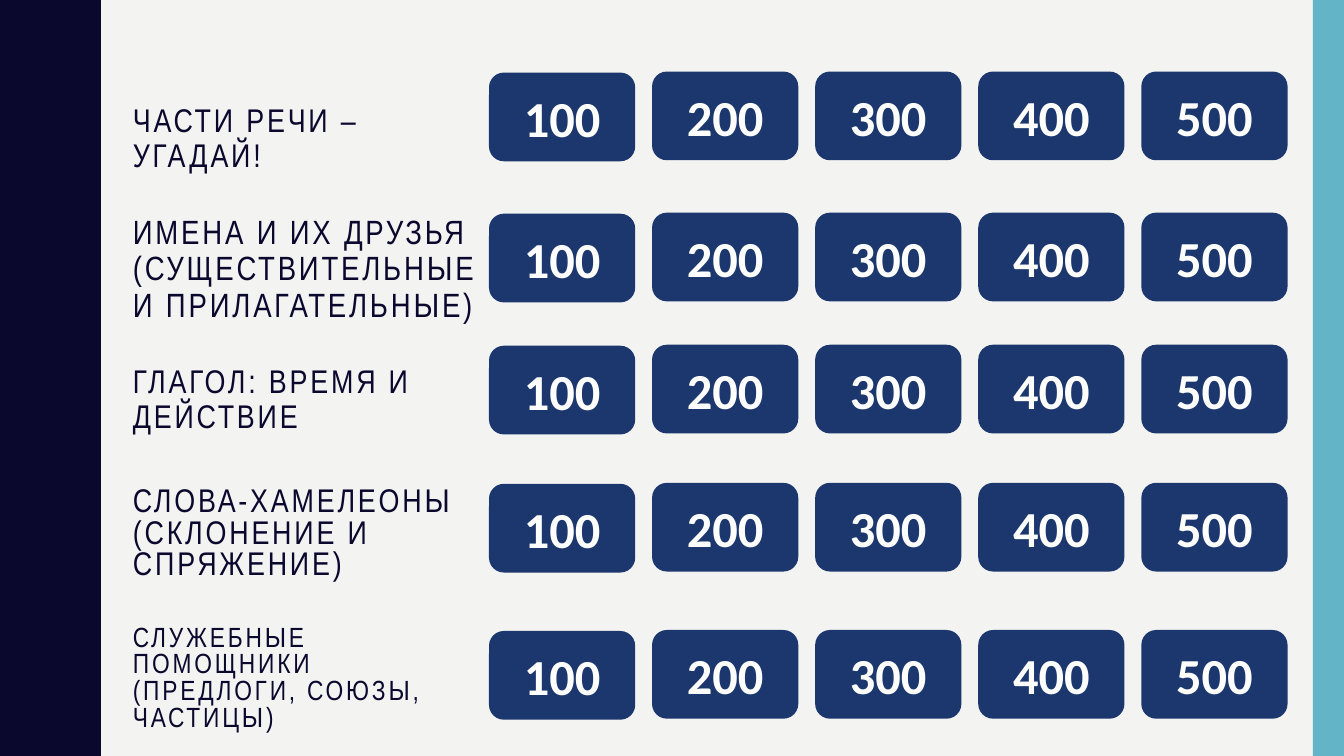
from pptx import Presentation
from pptx.dml.color import RGBColor
from pptx.enum.shapes import MSO_SHAPE
from pptx.enum.text import MSO_ANCHOR, PP_ALIGN
from pptx.util import Inches, Pt

COLORS = {"back": "F3F3F2", "navy": "0B082E", "edge": "62B4C6",
          "tile": "1B376E", "white": "FFFFFF"}

TOPICS = [
    {"text": "ЧАСТИ РЕЧИ – УГАДАЙ!", "top": 0.98, "size": 23.4, "line": 0.9, "row": 0.71},
    {"text": "ИМЕНА И ИХ ДРУЗЬЯ (СУЩЕСТВИТЕЛЬНЫЕ И ПРИЛАГАТЕЛЬНЫЕ)",
     "top": 2.09, "size": 24, "line": 0.9, "row": 2.11},
    {"text": "ГЛАГОЛ: ВРЕМЯ И ДЕЙСТВИЕ", "top": 3.57, "size": 23.4, "line": 0.9, "row": 3.42},
    {"text": "СЛОВА-ХАМЕЛЕОНЫ (СКЛОНЕНИЕ И СПРЯЖЕНИЕ)",
     "top": 4.79, "size": 23.4, "line": 0.8, "row": 4.79},
    {"text": "СЛУЖЕБНЫЕ ПОМОЩНИКИ (ПРЕДЛОГИ, СОЮЗЫ, ЧАСТИЦЫ)",
     "top": 6.16, "size": 19.8, "line": 0.8, "row": 6.25},
]
POINTS = ["100", "200", "300", "400", "500"]
FIRST, LAST = 4.85, 11.32
STEP = (LAST - FIRST) / (len(POINTS) - 1)
DROP = 0.01

WAVES, PERIOD = 5, 1.5
CREST = [(0.78, 0), (0.78, 0.07), (0.79, 0.14), (0.8, 0.2), (0.81, 0.25),
         (0.83, 0.29), (0.85, 0.33), (0.87, 0.38), (0.89, 0.42), (0.91, 0.46),
         (0.93, 0.5), (0.95, 0.55), (0.96, 0.61), (0.97, 0.68), (0.97, 0.75)]


def color(name):
    return RGBColor.from_string(COLORS[name])


def paint(shape, name):
    shape.shadow.inherit = False
    shape.fill.solid()
    shape.fill.fore_color.rgb = color(name)
    shape.line.fill.background()


def write(shape, text, font, size, ink, bold=False, align=PP_ALIGN.LEFT,
          anchor=MSO_ANCHOR.TOP, line=1.0, space=0):
    frame = shape.text_frame
    frame.word_wrap = True
    frame.vertical_anchor = anchor
    para = frame.paragraphs[0]
    para.alignment = align
    para.line_spacing = line
    run = para.add_run()
    run.text = text
    run.font.name = font
    run.font.size = Pt(size)
    run.font.bold = bold
    run.font.color.rgb = color(ink)
    if space:
        run.font._element.set("spc", str(space * 100))


def add_wave(shapes):
    wave = CREST + [(x, PERIOD - y) for x, y in CREST[-2::-1]]
    dots = [(x, y + PERIOD * i) for i in range(WAVES) for x, y in wave]
    form = shapes.build_freeform(0, 0, scale=Inches(1))
    form.add_line_segments(dots + [(0, WAVES * PERIOD)], close=True)
    paint(form.convert_to_shape(), "navy")


def main():
    deck = Presentation()
    deck.slide_width, deck.slide_height = Inches(13.33), Inches(7.5)
    slide = deck.slides.add_slide(deck.slide_layouts[6])
    slide.background.fill.solid()
    slide.background.fill.fore_color.rgb = color("back")
    shapes = slide.shapes

    add_wave(shapes)
    edge = shapes.add_shape(MSO_SHAPE.RECTANGLE, Inches(13.02), 0,
                            Inches(0.31), Inches(7.5))
    paint(edge, "edge")

    for topic in TOPICS:
        label = shapes.add_textbox(Inches(1.22), Inches(topic["top"]),
                                   Inches(3.63), Inches(1.11))
        write(label, topic["text"], font="Arial Narrow", size=topic["size"],
              ink="navy", line=topic["line"], space=2)
        for i, value in enumerate(POINTS):
            top = topic["row"] + (DROP if i == 0 else 0)
            tile = shapes.add_shape(MSO_SHAPE.ROUNDED_RECTANGLE,
                                    Inches(FIRST + STEP * i), Inches(top),
                                    Inches(1.45), Inches(0.88))
            paint(tile, "tile")
            write(tile, value, font="Calibri", size=36, ink="white", bold=True,
                  align=PP_ALIGN.CENTER, anchor=MSO_ANCHOR.MIDDLE)

    deck.save("out.pptx")


if __name__ == "__main__":
    main()
